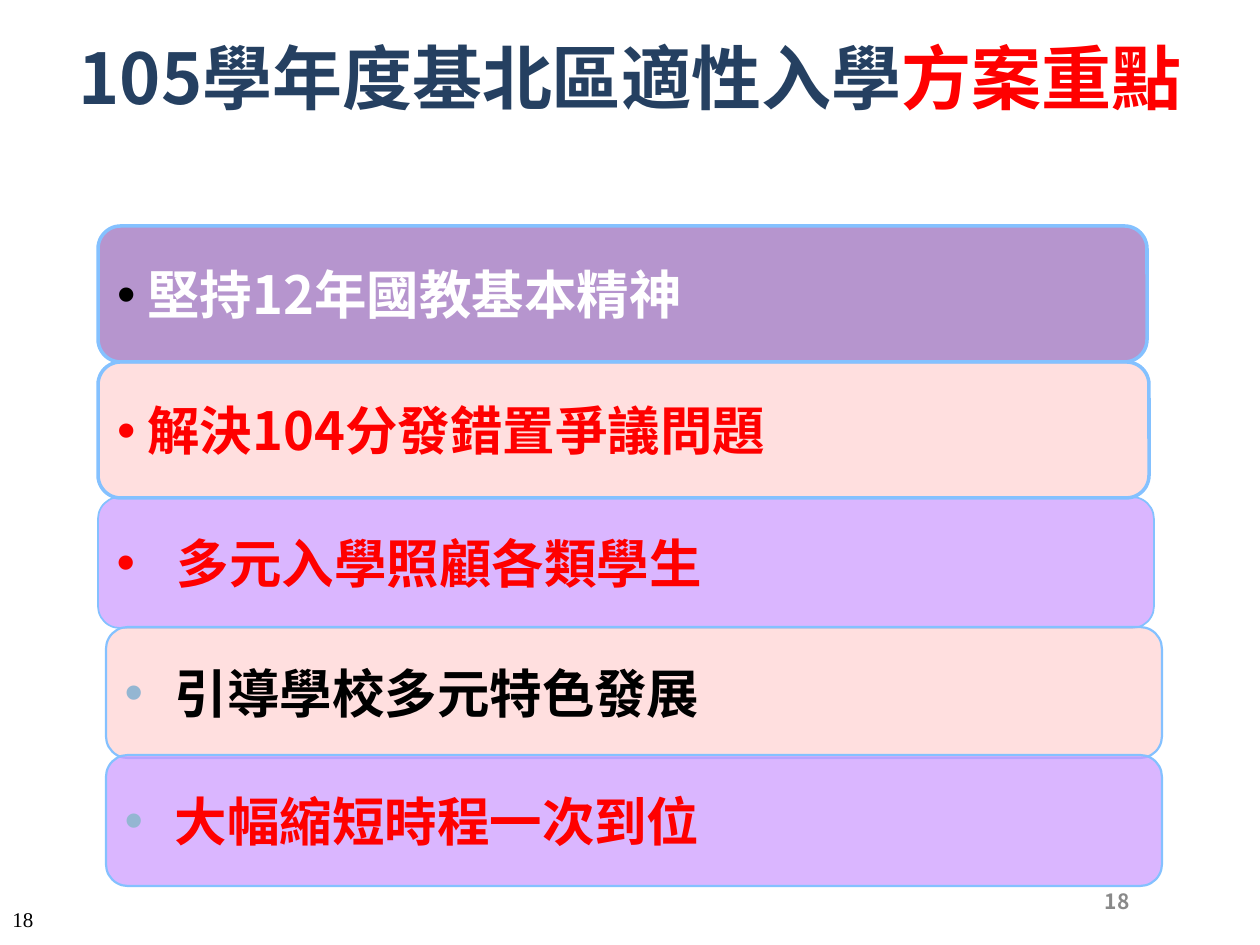
import pptx
import pptx.util
import pptx.dml.color
import pptx.enum.shapes
import pptx.enum.text
import pptx.oxml.ns
from lxml import etree

RGBColor = pptx.dml.color.RGBColor
ANCHOR = pptx.enum.text.MSO_ANCHOR
ALIGN = pptx.enum.text.PP_ALIGN
qn = pptx.oxml.ns.qn

EMU_PER_PX = 914400 / 126
SANS, SERIF = "Noto Sans CJK SC", "Times New Roman"

NAVY = RGBColor(0x25, 0x40, 0x61)
RED = RGBColor(0xFF, 0x00, 0x00)
BLACK = RGBColor(0x00, 0x00, 0x00)
WHITE = RGBColor(0xFF, 0xFF, 0xFF)
GRAY = RGBColor(0x89, 0x89, 0x89)
PURPLE = RGBColor(0x70, 0x30, 0xA0)
LILAC = RGBColor(0xCC, 0x99, 0xFF)
PINK = RGBColor(0xFF, 0xCC, 0xCC)
OUTLINE = RGBColor(0x84, 0xC1, 0xFF)
BULLET_BLUE = RGBColor(0x94, 0xB6, 0xD2)

# Text boxes: box in px, anchor, alignment, size, font, bold, runs
TEXTS = [
    ((0, 3, 1260, 147), ANCHOR.MIDDLE, ALIGN.CENTER, 40, SANS, True,
     [("105學年度基北區適性入學", NAVY), ("方案重點", RED)]),
    ((0, 900, 78, 31), ANCHOR.TOP, ALIGN.LEFT, 12, SERIF, False, [("18", BLACK)]),
    ((848, 876, 294, 50), ANCHOR.MIDDLE, ALIGN.RIGHT, 12, SANS, True, [("18", GRAY)]),
]

# Bars, back to front: box in px, fill, opacity %, line pt, indent px, bullet, runs
BARS = [
    ((98, 497, 1056, 131), LILAC, 71, 1, 48, RED, [(" 多元入學照顧各類學生", RED)]),
    ((98, 226, 1049, 136), PURPLE, 51, 2, 0, BLACK,
     [(" ", BLACK), ("堅持12年國教基本精神", WHITE)]),
    ((98, 362, 1051, 136), PINK, 61, 2, 0, RED, [(" 解決104分發錯置爭議問題", RED)]),
    ((106, 627, 1056, 131), PINK, 62, 1.25, 38, BULLET_BLUE,
     [(" 引導學校多元特色發展", BLACK)]),
    ((106, 755, 1056, 131), LILAC, 71, 1.25, 38, BULLET_BLUE,
     [(" 大幅縮短時程一次到位", RED)]),
]


def px(value):
    return pptx.util.Emu(round(value * EMU_PER_PX))


def add_runs(paragraph, runs, size, font_name, bold):
    for text, color in runs:
        run = paragraph.add_run()
        run.text = text
        run.font.size = pptx.util.Pt(size)
        run.font.name = font_name
        run.font.bold = bold
        run.font.color.rgb = color
        east_asian = etree.SubElement(run.font._element, qn("a:ea"))
        east_asian.set("typeface", font_name)


def add_bullet(paragraph, color, indent):
    properties = paragraph._p.get_or_add_pPr()
    properties.set("marL", str(px(indent)))
    properties.set("indent", str(-px(indent)))
    bullet_color = etree.SubElement(properties, qn("a:buClr"))
    etree.SubElement(bullet_color, qn("a:srgbClr")).set("val", str(color))
    etree.SubElement(properties, qn("a:buFont")).set("typeface", "Arial")
    etree.SubElement(properties, qn("a:buChar")).set("char", "•")


def prepare_paragraph(shape, anchor, alignment):
    frame = shape.text_frame
    frame.word_wrap = True
    frame.vertical_anchor = anchor
    paragraph = frame.paragraphs[0]
    paragraph.alignment = alignment
    return paragraph


def add_text(slide, box, anchor, alignment, size, font_name, bold, runs):
    shape = slide.shapes.add_textbox(*map(px, box))
    paragraph = prepare_paragraph(shape, anchor, alignment)
    add_runs(paragraph, runs, size, font_name, bold)


def add_bar(slide, box, fill, opacity, line_width, indent, bullet_color, runs):
    shape = slide.shapes.add_shape(
        pptx.enum.shapes.MSO_SHAPE.ROUNDED_RECTANGLE, *map(px, box))
    shape.shadow.inherit = False
    shape.fill.solid()
    shape.fill.fore_color.rgb = fill
    fill_color = shape._element.spPr.find(qn("a:solidFill")).find(qn("a:srgbClr"))
    etree.SubElement(fill_color, qn("a:alpha")).set("val", str(opacity * 1000))
    shape.line.color.rgb = OUTLINE
    shape.line.width = pptx.util.Pt(line_width)
    paragraph = prepare_paragraph(shape, ANCHOR.MIDDLE, ALIGN.LEFT)
    add_bullet(paragraph, bullet_color, indent)
    add_runs(paragraph, runs, 30, SANS, True)


def main():
    presentation = pptx.Presentation()
    presentation.slide_width, presentation.slide_height = px(1260), px(945)
    slide = presentation.slides.add_slide(presentation.slide_layouts[6])

    # Title and page numbers
    for text in TEXTS:
        add_text(slide, *text)

    # Stacked key points
    for bar in BARS:
        add_bar(slide, *bar)

    presentation.save("out.pptx")


if __name__ == "__main__":
    main()
